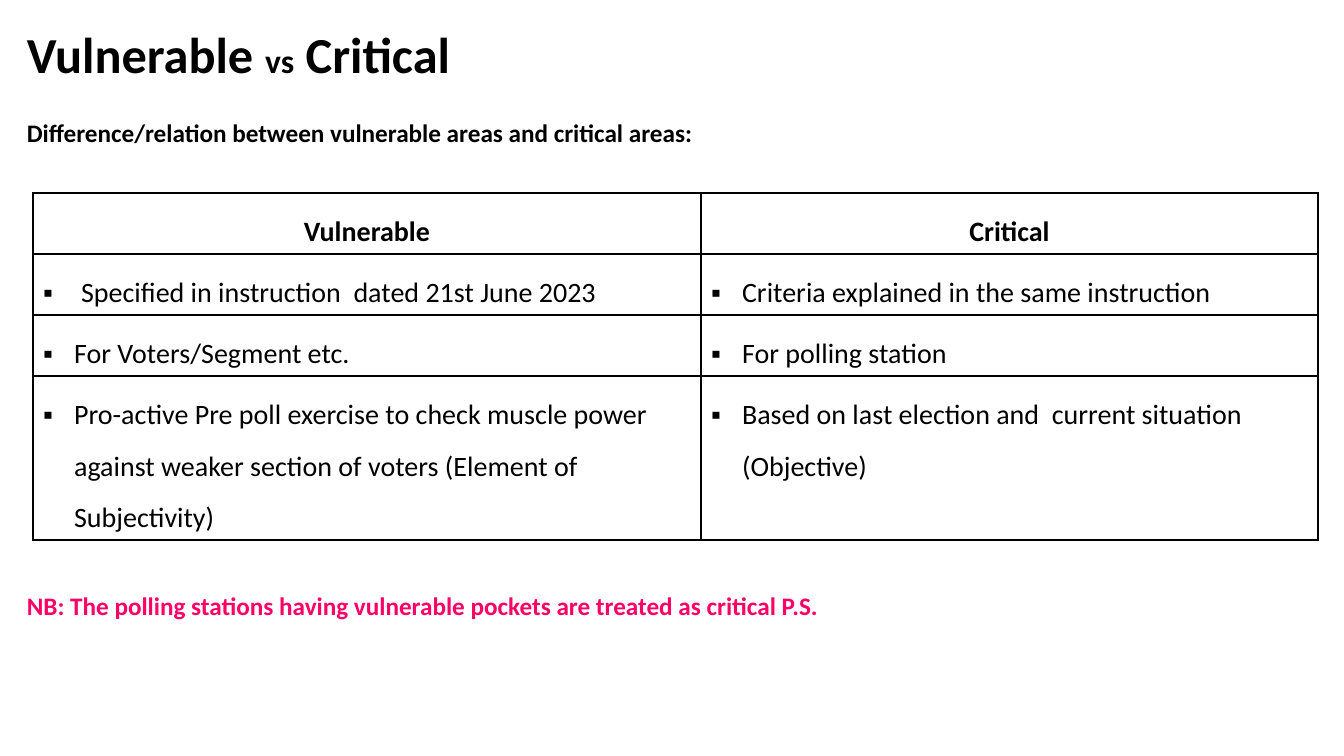
from lxml import etree
from pptx import Presentation
from pptx import util as u
from pptx.dml.color import RGBColor
from pptx.enum import text
from pptx.oxml import ns

BLACK = RGBColor(0x00, 0x00, 0x00)
PINK = RGBColor(0xFF, 0x00, 0x66)
FONT = "Calibri"
SCALE = 914400 / 100.8

HEADS = ["Vulnerable", "Critical"]
POINTS = [
    ["Specified in instruction  dated 21st June 2023",
     "Criteria explained in the same instruction"],
    ["For Voters/Segment etc.", "For polling station"],
    ["Pro-active Pre poll exercise to check muscle power against weaker "
     "section of voters (Element of Subjectivity)",
     "Based on last election and  current situation (Objective)"],
]
COLS = [668, 617]
ROWS = [61, 61, 61, 164]


def px(n):
    return u.Emu(round(n * SCALE))


def style(run, size, color=BLACK, bold=True):
    font = run.font
    font.name, font.size, font.bold = FONT, u.Pt(size), bold
    font.color.rgb = color


def add_line(slide, box, parts, color=BLACK, align=text.PP_ALIGN.LEFT):
    """Place one line of text made of (words, size) parts."""
    frame = slide.shapes.add_textbox(*map(px, box)).text_frame
    frame.word_wrap = True
    para = frame.paragraphs[0]
    para.alignment = align
    for words, size in parts:
        run = para.add_run()
        run.text = words
        style(run, size, color)


def add_edges(cell):
    props = cell._tc.get_or_add_tcPr()
    for i, tag in enumerate(("a:lnL", "a:lnR", "a:lnT", "a:lnB")):
        line = etree.Element(ns.qn(tag), w=str(u.Pt(1)))
        fill = etree.SubElement(line, ns.qn("a:solidFill"))
        etree.SubElement(fill, ns.qn("a:srgbClr"), val=str(BLACK))
        props.insert(i, line)


def add_bullet(para, indent):
    props = para._p.get_or_add_pPr()
    props.set("marL", str(px(indent)))
    props.set("indent", str(-px(indent)))
    etree.SubElement(props, ns.qn("a:buFont"), typeface="Arial")
    etree.SubElement(props, ns.qn("a:buChar"), char="▪")


def add_grid(slide, left, top):
    """Place the two-column comparison."""
    rows = [HEADS] + POINTS
    table = slide.shapes.add_table(
        len(rows), len(COLS), px(left), px(top),
        px(sum(COLS)), px(sum(ROWS))).table
    for col, width in zip(table.columns, COLS):
        col.width = px(width)
    for r, (row, height) in enumerate(zip(rows, ROWS)):
        table.rows[r].height = px(height)
        for c, words in enumerate(row):
            cell = table.cell(r, c)
            cell.fill.background()
            add_edges(cell)
            para = cell.text_frame.paragraphs[0]
            para.text = words
            para.line_spacing = 1.5
            style(para.runs[0], 20, bold=r == 0)
            if r == 0:
                para.alignment = text.PP_ALIGN.CENTER
            else:
                # The first point is set in a little further
                add_bullet(para, 38 if (r, c) == (1, 0) else 31)


def main():
    deck = Presentation()
    deck.slide_width, deck.slide_height = px(1344), px(756)
    slide = deck.slides.add_slide(deck.slide_layouts[6])

    # Title and lead
    add_line(slide, (17, 18, 1281, 84),
             [("Vulnerable ", 36), ("vs", 24), (" Critical", 36)])
    add_line(slide, (17, 112, 1302, 40),
             [("Difference/relation between vulnerable areas and "
               "critical areas:", 18)], align=text.PP_ALIGN.JUSTIFY)
    # Comparison
    add_grid(slide, 33, 193)
    # Closing note
    add_line(slide, (17, 585, 1192, 72),
             [("NB: The polling stations having vulnerable pockets are "
               "treated as critical P.S.", 18)], PINK)

    deck.save("out.pptx")


if __name__ == "__main__":
    main()
